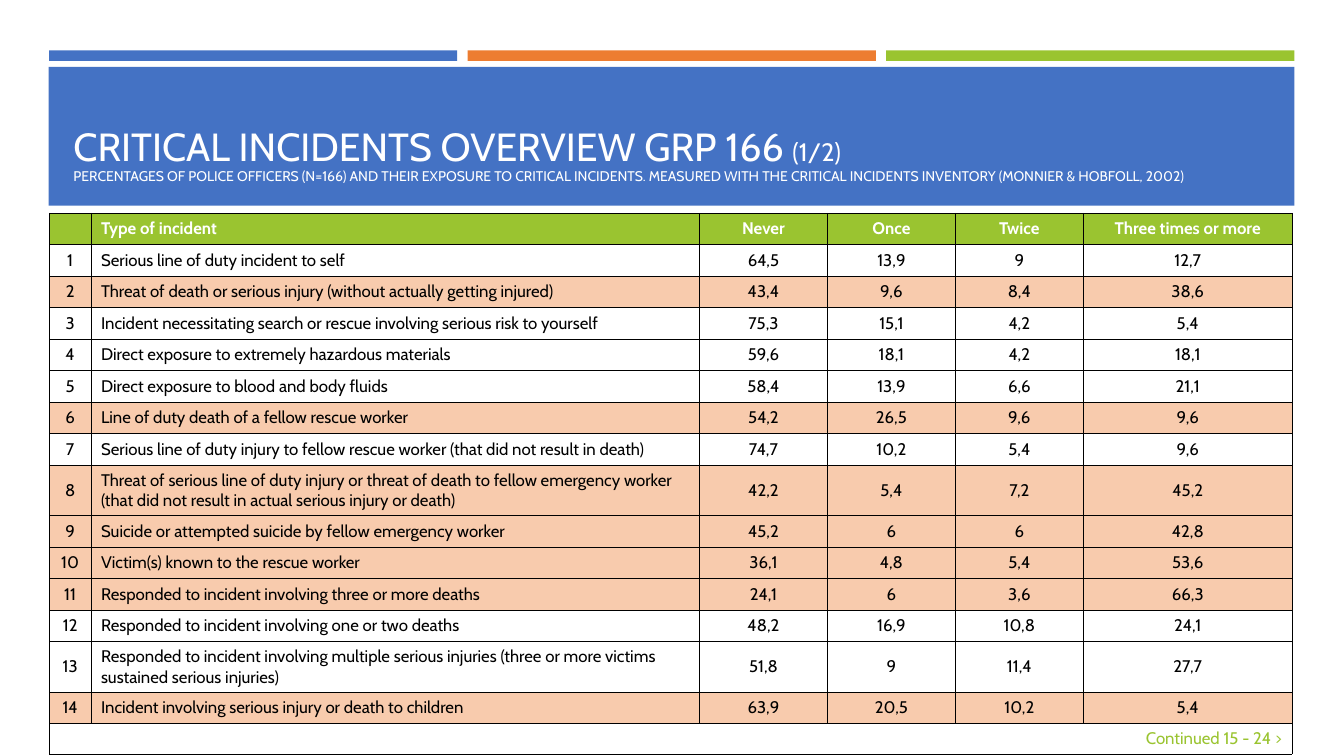
import pptx
import pptx.dml.color
import pptx.enum.shapes
import pptx.enum.text
import pptx.oxml
import pptx.oxml.ns
import pptx.util
from pptx.util import Pt

BLUE, ORANGE, GREEN, PEACH = "4472C4", "ED7D31", "9AC430", "F8CBAD"
WHITE, BLACK = "FFFFFF", "000000"
FONT = "Cabin"


def color(hex_string):
    return pptx.dml.color.RGBColor.from_string(hex_string)


def add_bar(left, top, width, height, fill):
    bar = slide.shapes.add_shape(
        pptx.enum.shapes.MSO_SHAPE.RECTANGLE, Pt(left), Pt(top), Pt(width), Pt(height))
    bar.shadow.inherit = False
    bar.fill.solid()
    bar.fill.fore_color.rgb = color(fill)
    bar.line.fill.background()


presentation = pptx.Presentation()
presentation.slide_width, presentation.slide_height = Pt(960), Pt(540)
slide = presentation.slides.add_slide(presentation.slide_layouts[6])

# Header band with three accent bars
for position, accent in enumerate((BLUE, ORANGE, GREEN)):
    add_bar(35 + position * 299, 36, 291.6, 7.5, accent)
add_bar(34.8, 47.8, 889.8, 99.2, BLUE)

# Title
title = slide.shapes.add_textbox(Pt(45.4), Pt(57.6), Pt(868.3), Pt(77.8)).text_frame
title.word_wrap = True
title.vertical_anchor = pptx.enum.text.MSO_ANCHOR.BOTTOM
heading = title.paragraphs[0]
heading.line_spacing = 0.9
for wording, size in (
    ("CRITICAL INCIDENTS OVERVIEW GRP 166 ", 28),
    ("(1/2)", 18),
    ("PERCENTAGES OF POLICE OFFICERS (N=166) AND THEIR EXPOSURE TO CRITICAL INCIDENTS. "
     "MEASURED WITH THE CRITICAL INCIDENTS INVENTORY (MONNIER & HOBFOLL, 2002)", 10),
):
    if size == 10:
        heading.add_line_break()
    run = heading.add_run()
    run.text = wording
    run.font.name, run.font.size = FONT, Pt(size)
    run.font.color.rgb = color(WHITE)

# Incident table
header = ("", "Type of incident", "Never", "Once", "Twice", "Three times or more")
incidents = [
    ("Serious line of duty incident to self", "64,5", "13,9", "9", "12,7"),
    ("Threat of death or serious injury (without actually getting injured)",
     "43,4", "9,6", "8,4", "38,6"),
    ("Incident necessitating search or rescue involving serious risk to yourself",
     "75,3", "15,1", "4,2", "5,4"),
    ("Direct exposure to extremely hazardous materials", "59,6", "18,1", "4,2", "18,1"),
    ("Direct exposure to blood and body fluids", "58,4", "13,9", "6,6", "21,1"),
    ("Line of duty death of a fellow rescue worker", "54,2", "26,5", "9,6", "9,6"),
    ("Serious line of duty injury to fellow rescue worker (that did not result in death)",
     "74,7", "10,2", "5,4", "9,6"),
    ("Threat of serious line of duty injury or threat of death to fellow emergency worker "
     "(that did not result in actual serious injury or death)", "42,2", "5,4", "7,2", "45,2"),
    ("Suicide or attempted suicide by fellow emergency worker", "45,2", "6", "6", "42,8"),
    ("Victim(s) known to the rescue worker", "36,1", "4,8", "5,4", "53,6"),
    ("Responded to incident involving three or more deaths", "24,1", "6", "3,6", "66,3"),
    ("Responded to incident involving one or two deaths", "48,2", "16,9", "10,8", "24,1"),
    ("Responded to incident involving multiple serious injuries (three or more victims "
     "sustained serious injuries)", "51,8", "9", "11,4", "27,7"),
    ("Incident involving serious injury or death to children", "63,9", "20,5", "10,2", "5,4"),
]
highlighted = {2, 6, 8, 9, 10, 11, 14}
continued = ("Continued 15 - 24 >", "", "", "", "", "")
rows = [header]
rows += [(str(number), *incident) for number, incident in enumerate(incidents, 1)]
rows.append(continued)
last = len(rows) - 1

table = slide.shapes.add_table(
    len(rows), len(header), Pt(35.3), Pt(152.2), Pt(888), Pt(387)).table
table.horz_banding = False
table.first_row = False
for column, width in zip(table.columns, (29.7, 434.7, 91.4, 91.4, 91.4, 149.2)):
    column.width = Pt(width)
table.cell(last, 0).merge(table.cell(last, len(header) - 1))

ALIGN = pptx.enum.text.PP_ALIGN
for row_number, texts in enumerate(rows):
    table.rows[row_number].height = Pt({8: 36.3, last: 19.4}.get(row_number, 22.5))
    if row_number == 0:
        fill, ink = GREEN, WHITE
    elif row_number == last:
        fill, ink = WHITE, GREEN
    else:
        fill, ink = (PEACH if row_number in highlighted else WHITE), BLACK
    for column_number, wording in enumerate(texts):
        cell = table.cell(row_number, column_number)
        for side in ("lnL", "lnR", "lnT", "lnB"):
            cell._tc.get_or_add_tcPr().append(pptx.oxml.parse_xml(
                f'<a:{side} {pptx.oxml.ns.nsdecls("a")} w="{Pt(0.25)}"><a:solidFill>'
                f'<a:srgbClr val="{BLACK}"/></a:solidFill></a:{side}>'))
        cell.fill.solid()
        cell.fill.fore_color.rgb = color(fill)
        cell.vertical_anchor = pptx.enum.text.MSO_ANCHOR.MIDDLE
        paragraph = cell.text_frame.paragraphs[0]
        paragraph.text = wording
        if row_number == last:
            paragraph.alignment = ALIGN.RIGHT
        else:
            paragraph.alignment = ALIGN.LEFT if column_number == 1 else ALIGN.CENTER
        # Empty cells take their line height from the end-of-paragraph size
        paragraph._p.get_or_add_endParaRPr().set("sz", "1200")
        for run in paragraph.runs:
            run.font.name, run.font.size = FONT, Pt(12)
            run.font.bold = row_number == 0
            run.font.color.rgb = color(ink)

presentation.save("out.pptx")
